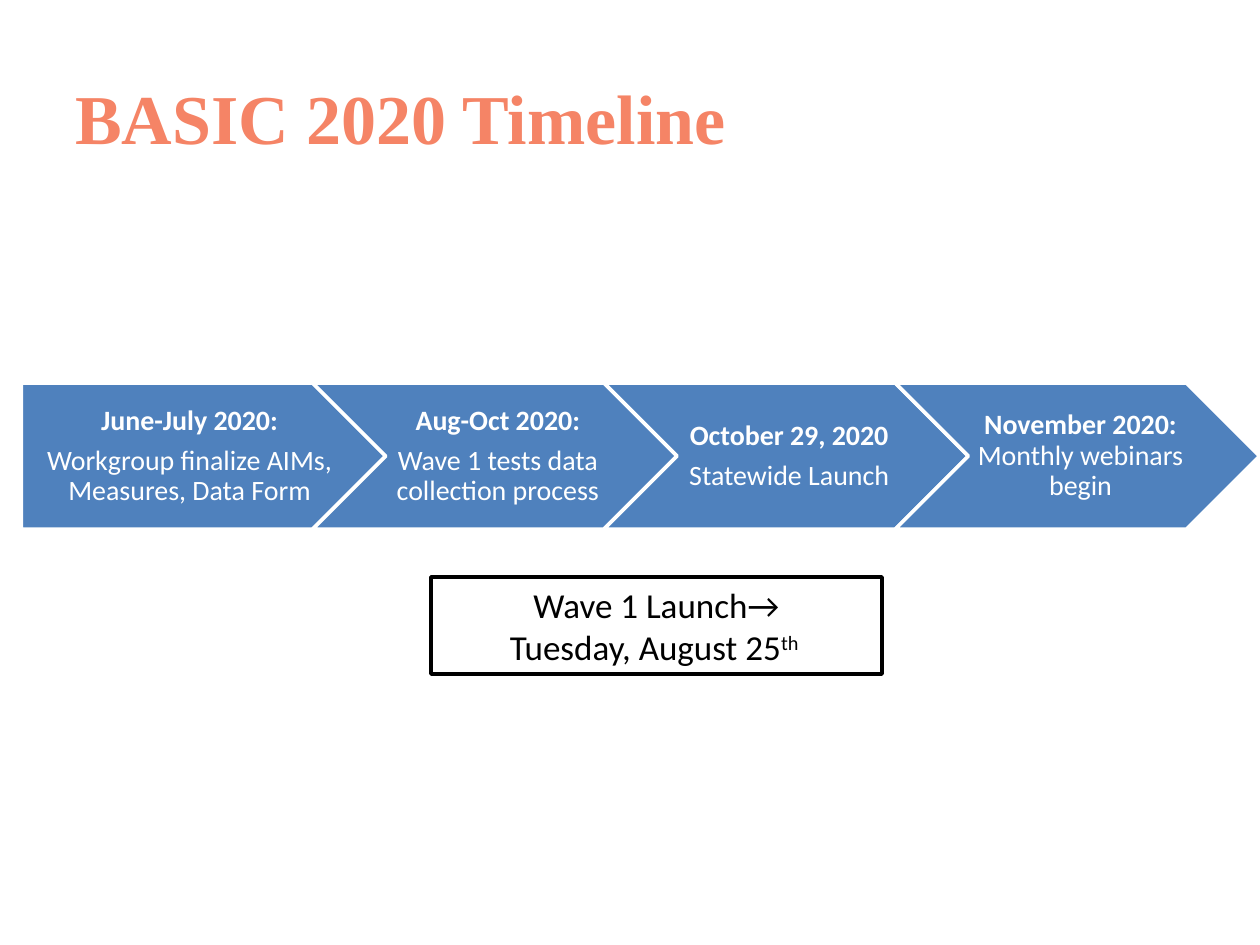
import dataclasses

import pptx
import pptx.dml.color
import pptx.enum.shapes
import pptx.enum.text
import pptx.util

Inches = pptx.util.Inches
Pt = pptx.util.Pt
Color = pptx.dml.color.RGBColor.from_string
Shapes = pptx.enum.shapes.MSO_SHAPE
Align = pptx.enum.text.PP_ALIGN
Anchor = pptx.enum.text.MSO_ANCHOR


@dataclasses.dataclass
class Theme:
    heading_font: str = "Times New Roman"
    body_font: str = "Calibri"
    coral: str = "F58466"
    blue: str = "4F81BD"
    white: str = "FFFFFF"
    black: str = "000000"
    title_size: int = 40
    step_size: int = 16
    note_size: int = 20
    line_width: int = 2


class TimelinePage:
    def __init__(self, page, theme):
        self.page = page
        self.theme = theme

    def style(self, font, name, size, color, bold=False):
        font.name = name
        font.size = Pt(size)
        font.color.rgb = Color(color)
        font.bold = bold

    def text_box(self, left, top, width, height, insets=(0.1, 0.05, 0.1, 0.05)):
        box = self.page.shapes.add_textbox(
            Inches(left), Inches(top), Inches(width), Inches(height))
        frame = box.text_frame
        frame.word_wrap = True
        frame.vertical_anchor = Anchor.MIDDLE
        (frame.margin_left, frame.margin_top,
         frame.margin_right, frame.margin_bottom) = map(Inches, insets)
        return frame

    def title(self, text):
        frame = self.text_box(0.5, 0.3, 9, 1.25)
        frame.text = text
        self.style(frame.paragraphs[0].runs[0].font, self.theme.heading_font,
                   self.theme.title_size, self.theme.coral, bold=True)

    def shape(self, kind, left, top, width, height, fill, line):
        shape = self.page.shapes.add_shape(
            kind, Inches(left), Inches(top), Inches(width), Inches(height))
        shape.shadow.inherit = False
        shape.fill.solid()
        shape.fill.fore_color.rgb = Color(fill)
        shape.line.color.rgb = Color(line)
        shape.line.width = Pt(self.theme.line_width)
        return shape

    def step_text(self, frame, paragraphs):
        """Each paragraph is a list of (text, bold) pairs."""
        for index, spans in enumerate(paragraphs):
            para = frame.paragraphs[0] if index == 0 else frame.add_paragraph()
            para.alignment = Align.CENTER
            para.line_spacing = 0.9
            para.space_after = Pt(0.35 * self.theme.step_size)
            for text, bold in spans:
                span = para.add_run()
                span.text = text
                self.style(span.font, self.theme.body_font, self.theme.step_size,
                           self.theme.white, bold)

    def note(self, left, top, width, height, lines, superscript):
        box = self.shape(Shapes.RECTANGLE, left, top, width, height,
                         self.theme.white, self.theme.black)
        frame = box.text_frame
        frame.text = "\n".join(lines)
        raised = frame.paragraphs[-1].add_run()
        raised.text = superscript
        for para in frame.paragraphs:
            para.alignment = Align.CENTER
            for span in para.runs:
                self.style(span.font, self.theme.body_font, self.theme.note_size,
                           self.theme.black)
        raised._r.get_or_add_rPr().set("baseline", "30000")


STEPS = [
    [[("June-July 2020:", True)],
     [("Workgroup finalize AIMs, Measures, Data Form", False)]],
    [[("Aug-Oct 2020:", True)],
     [("Wave 1 tests data collection process", False)]],
    [[("October 29, 2020", True)],
     [("Statewide Launch", False)]],
    [[("November 2020: ", True), ("Monthly webinars begin", False)]],
]


def main():
    deck = pptx.Presentation()
    deck.slide_width, deck.slide_height = Inches(10), Inches(7.5)
    theme = Theme()
    timeline = TimelinePage(deck.slides.add_slide(deck.slide_layouts[6]), theme)

    timeline.title("BASIC 2020 Timeline")

    # Row of arrows: half the height is the depth of each point
    first_left, top, width, height = 0.17, 3.04, 2.89, 1.16
    pitch = 0.8 * width
    point = height / 2
    for index, paragraphs in enumerate(STEPS):
        left = first_left + index * pitch
        first = index == 0
        timeline.shape(Shapes.PENTAGON if first else Shapes.CHEVRON,
                       left, top, width, height, theme.blue, theme.white)
        if first:
            frame = timeline.text_box(left, top, width - point / 2, height,
                                      (0.09, 0.05, 0.02, 0.05))
        else:
            frame = timeline.text_box(left + point, top, width - 2 * point, height,
                                      (0.07, 0.05, 0.02, 0.05))
        timeline.step_text(frame, paragraphs)

    # Launch date
    timeline.note(3.42, 4.58, 3.58, 0.77,
                  ["Wave 1 Launch→", "Tuesday, August 25"], "th ")

    deck.save("out.pptx")


if __name__ == "__main__":
    main()
